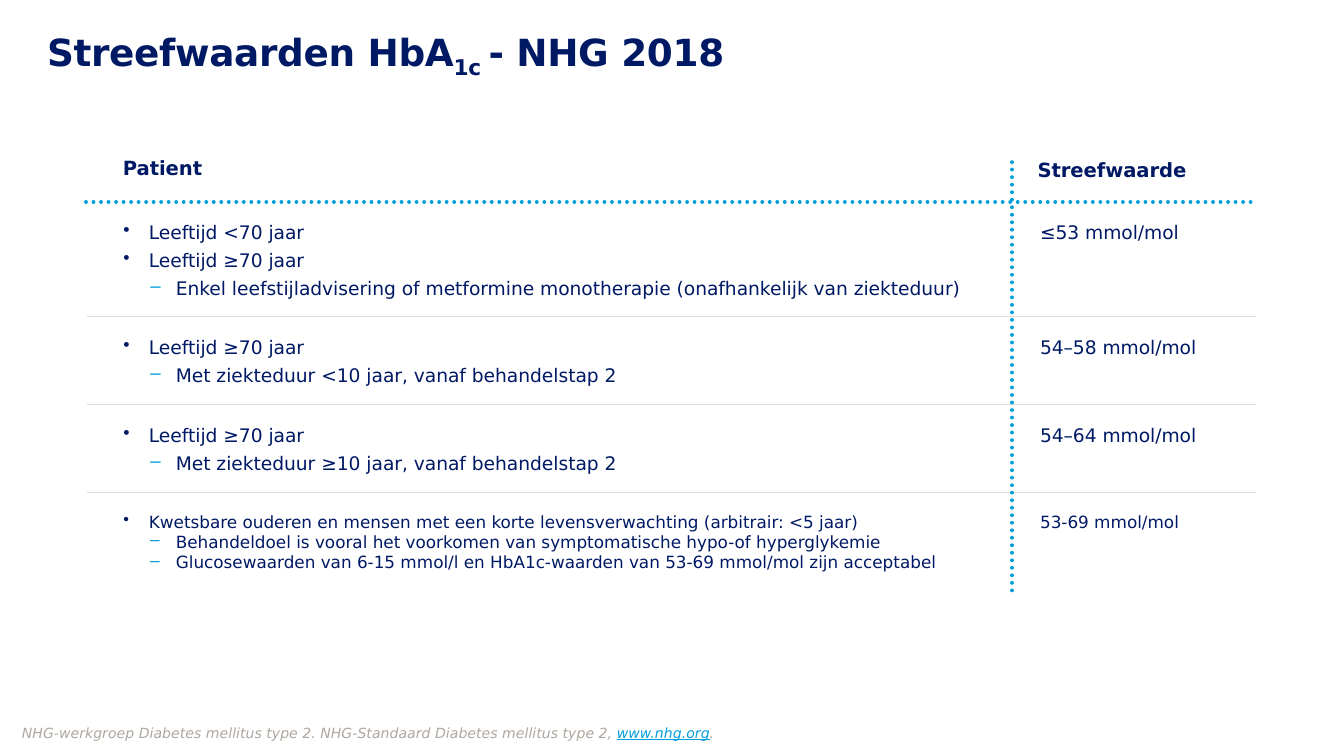
from lxml import etree
from pptx import Presentation, util as u
from pptx.dml.color import RGBColor
from pptx.enum import dml, shapes, text
from pptx.oxml.ns import qn

W = u.Inches(10)
H = W * 9 // 16
COL, ROW = W / 100, H / 56.25
NAVY, BLUE, GREY, SAND = "001965", "009FDA", "E0DED8", "AEA79F"
FONT = "DejaVu Sans"
GAP = 1.95
PATIENTS = [
    (6.6, 10, 3, "≤53 mmol/mol", [
        (0, "Leeftijd <70 jaar"),
        (0, "Leeftijd ≥70 jaar"),
        (1, "Enkel leefstijladvisering of metformine monotherapie (onafhankelijk van ziekteduur)")]),
    (4.6, 10, 3, "54–58 mmol/mol", [
        (0, "Leeftijd ≥70 jaar"),
        (1, "Met ziekteduur <10 jaar, vanaf behandelstap 2")]),
    (4.6, 10, 3, "54–64 mmol/mol", [
        (0, "Leeftijd ≥70 jaar"),
        (1, "Met ziekteduur ≥10 jaar, vanaf behandelstap 2")]),
    (5.3, 9, 0, "53-69 mmol/mol", [
        (0, "Kwetsbare ouderen en mensen met een korte levensverwachting (arbitrair: <5 jaar)"),
        (1, "Behandeldoel is vooral het voorkomen van symptomatische hypo-of hyperglykemie"),
        (1, "Glucosewaarden van 6-15 mmol/l en HbA1c-waarden van 53-69 mmol/mol zijn acceptabel")]),
]


def rgb(value):
    return RGBColor.from_string(value)


def apply(obj, **fmt):
    for name, value in fmt.items():
        setattr(obj, name, value)


def grid(x, y, w, h):
    return [round(v) for v in (x * COL, y * ROW, w * COL, h * ROW)]


def add_run(p, words, size, color=NAVY, **fmt):
    r = p.add_run()
    r.text = words
    apply(r.font, name=FONT, size=u.Pt(size), **fmt)
    r.font.color.rgb = rgb(color)
    return r


def set_insets(tf, x=0, y=0):
    apply(tf, margin_left=u.Inches(x), margin_right=u.Inches(x),
          margin_top=u.Inches(y), margin_bottom=u.Inches(y))


def add_text(s, box):
    tf = s.shapes.add_textbox(*grid(*box)).text_frame
    tf.word_wrap = True
    return tf


def add_line(s, x1, y1, x2, y2, color, width, dash=None):
    sp = s.shapes.add_connector(shapes.MSO_CONNECTOR.STRAIGHT, *grid(x1, y1, x2, y2))
    sp.line.color.rgb = rgb(color)
    apply(sp.line, width=u.Pt(width), dash_style=dash)
    if dash:
        sp._element.spPr.find(qn("a:ln")).set("cap", "rnd")
    etree.SubElement(sp._element.spPr, qn("a:effectLst"))


def add_bullet(p, level):
    pPr = p._p.get_or_add_pPr()
    pPr.set("marL", str(u.Inches((0.19, 0.39)[level])))
    pPr.set("indent", str(-u.Inches(0.19)))
    if level:
        clr = etree.SubElement(pPr, qn("a:buClr"))
        etree.SubElement(clr, qn("a:srgbClr"), val=BLUE)
    etree.SubElement(pPr, qn("a:buChar"), char="•–"[level])


def add_title(s, box):
    sp = s.shapes.title
    x, y, w, h = grid(*box)
    apply(sp, left=x, top=y, width=w, height=h)
    tf = sp.text_frame
    set_insets(tf)
    apply(tf, auto_size=text.MSO_AUTO_SIZE.NONE, word_wrap=True,
          vertical_anchor=text.MSO_ANCHOR.TOP)
    p = tf.paragraphs[0]
    apply(p, alignment=text.PP_ALIGN.LEFT, line_spacing=0.8)
    for words, base in (("Streefwaarden HbA", 0), ("1c ", -25000), ("- NHG 2018", 0)):
        rPr = add_run(p, words, 20, bold=True)._r.get_or_add_rPr()
        rPr.set("spc", "-20")
        rPr.set("baseline", str(base))


def add_heading(s, box, words, align):
    tf = add_text(s, box)
    set_insets(tf)
    p = tf.paragraphs[0]
    p.alignment = align
    add_run(p, words, 10.5, bold=True)


def add_cell(s, box, items, size, after):
    tf = add_text(s, box)
    tf.auto_size = text.MSO_AUTO_SIZE.SHAPE_TO_FIT_TEXT
    for i, (level, words) in enumerate(items):
        p = tf.add_paragraph() if i else tf.paragraphs[0]
        if level is not None:
            add_bullet(p, level)
        p.space_after = u.Pt(after)
        add_run(p, words, size)


def add_targets(s, box):
    x, y, w, h = box
    dots = dml.MSO_LINE.ROUND_DOT
    add_heading(s, (x - 2.3, y, 16, 2.2), "Patient", text.PP_ALIGN.CENTER)
    add_heading(s, (x + 70.8, y + 0.15, 16, 2.2), "Streefwaarde", text.PP_ALIGN.LEFT)
    add_line(s, x, y + 3.4, x + w, y + 3.4, BLUE, 2, dots)
    top = y + 4.3
    for i, (height, size, after, target, items) in enumerate(PATIENTS):
        if i:
            rule = top - GAP / 2
            add_line(s, x + 0.05, rule, x + w + 0.05, rule, GREY, 0.25)
        add_cell(s, (x + 1.8, top, 67.4, height), items, size, after)
        add_cell(s, (x + 70, top, 20.2, 2.7), [(None, target)], size, after)
        top += height + GAP
    add_line(s, x + 68.9, y + h, x + 68.9, y + 0.4, BLUE, 2, dots)


def add_source(s, box):
    tf = add_text(s, box)
    set_insets(tf, 0.65, 0.35)
    tf.vertical_anchor = text.MSO_ANCHOR.MIDDLE
    p = tf.paragraphs[0]
    p.line_spacing = 0.9
    add_run(p, "NHG-werkgroep Diabetes mellitus type 2. NHG-Standaard Diabetes mellitus type 2, ",
            7.5, SAND, italic=True)
    add_run(p, "www.nhg.org", 7.5, BLUE, italic=True, underline=True)
    add_run(p, ".", 7.5, SAND, italic=True)


def main():
    prs = Presentation()
    apply(prs, slide_width=W, slide_height=H)
    s = prs.slides.add_slide(prs.slide_layouts[5])
    add_title(s, (3.5, 2.5, 87.2, 7.1))
    add_targets(s, (6.4, 11.63, 87, 32.3))
    add_source(s, (-4.87, 48.3, 100, 12.6))
    prs.save("out.pptx")


if __name__ == "__main__":
    main()
